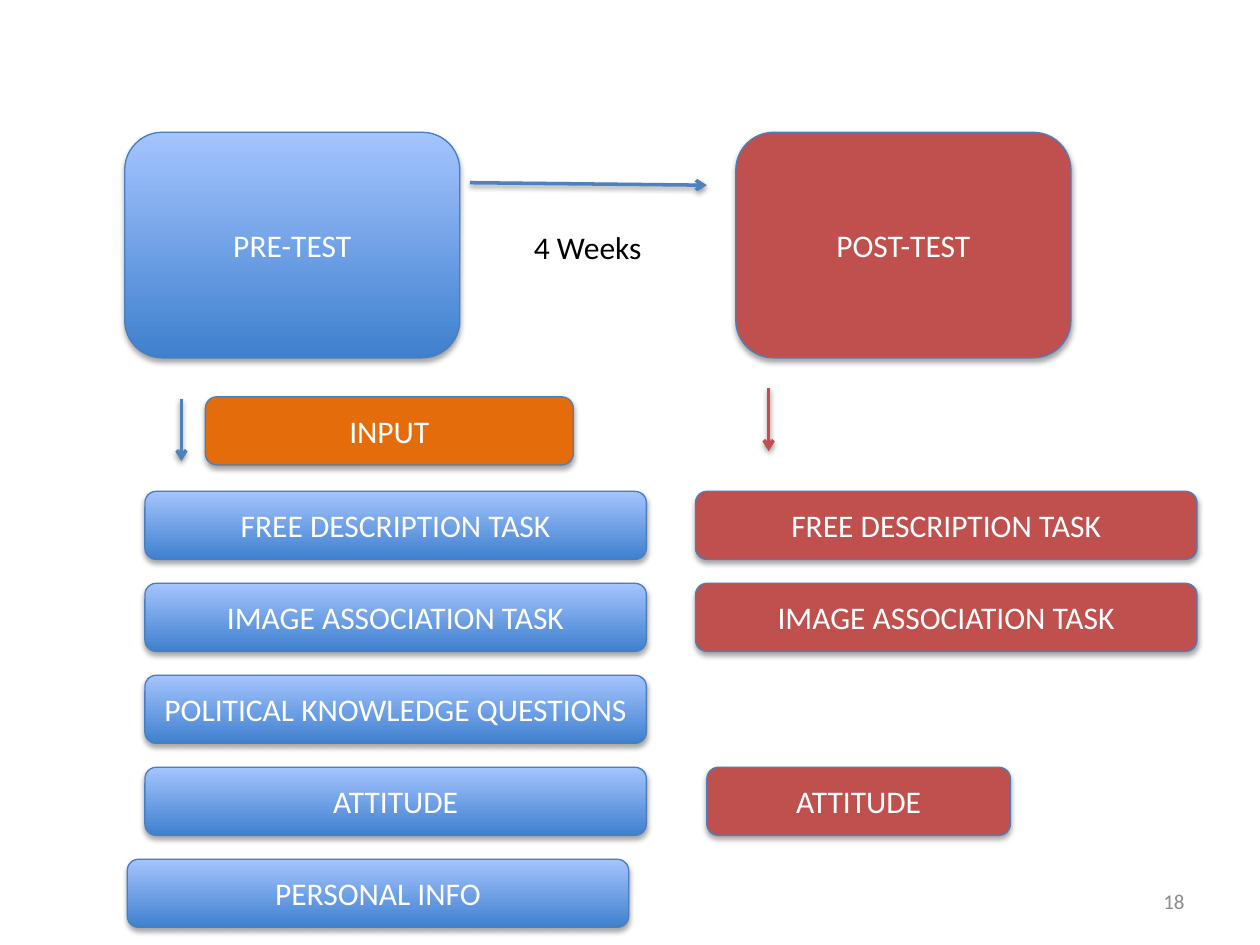
from dataclasses import dataclass
from typing import Optional

from lxml import etree
from pptx import Presentation
from pptx import util as u
from pptx.dml.color import RGBColor
from pptx.enum import shapes, text
from pptx.oxml import ns

WHITE = RGBColor(0xFF, 0xFF, 0xFF)
BLACK = RGBColor(0, 0, 0)
GREY = RGBColor(0x8C, 0x8C, 0x8C)
DEEP = RGBColor(0x3F, 0x80, 0xCE)
PALE = RGBColor(0xA4, 0xC4, 0xFF)
EDGE = RGBColor(0x4B, 0x7E, 0xBC)
BLUE = RGBColor(0x4F, 0x81, 0xBD)
RED = RGBColor(0xC0, 0x50, 0x4D)
ORANGE = RGBColor(0xE4, 0x6C, 0x0A)

FONT = "Calibri"
TOP, PITCH = 3.9, 0.73
WIDE, TALL = 3.98, 0.54


@dataclass
class Box:
    label: str
    left: float
    top: float
    width: float = WIDE
    height: float = TALL
    fill: Optional[RGBColor] = None


@dataclass
class Arrow:
    start: tuple[float, float]
    end: tuple[float, float]
    color: RGBColor


@dataclass
class Note:
    label: str
    left: float
    top: float
    width: float
    size: int
    color: RGBColor
    align: text.PP_ALIGN
    anchor: text.MSO_ANCHOR


def row(index: int) -> float:
    return TOP + PITCH * index


BOXES = [
    Box("PRE-TEST", 0.99, 1.05, 2.66, 1.79),
    Box("POST-TEST", 5.84, 1.05, 2.66, 1.79, RED),
    Box("FREE DESCRIPTION TASK", 1.15, row(0)),
    Box("IMAGE ASSOCIATION TASK", 1.15, row(1)),
    Box("POLITICAL KNOWLEDGE QUESTIONS", 1.15, row(2)),
    Box("ATTITUDE", 1.15, row(3)),
    Box("PERSONAL INFO", 1.01, row(4)),
    Box("INPUT", 1.63, 3.15, 2.92, fill=ORANGE),
    Box("FREE DESCRIPTION TASK", 5.52, row(0), fill=RED),
    Box("IMAGE ASSOCIATION TASK", 5.52, row(1), fill=RED),
    Box("ATTITUDE", 5.61, row(3), 2.41, fill=RED),
]

ARROWS = [
    Arrow((3.73, 1.45), (5.61, 1.47), BLUE),
    Arrow((1.44, 3.17), (1.44, 3.66), BLUE),
    Arrow((6.1, 3.08), (6.1, 3.58), RED),
]

NOTES = [
    Note("4 Weeks", 3.73, 1.76, 1.87, 18, BLACK,
         text.PP_ALIGN.CENTER, text.MSO_ANCHOR.TOP),
    Note("18", 7.17, 6.95, 2.33, 12, GREY,
         text.PP_ALIGN.RIGHT, text.MSO_ANCHOR.MIDDLE),
]


def add_shade(props, dist: float, alpha: int) -> None:
    effect = props.find(ns.qn("a:effectLst"))
    if effect is None:
        effect = etree.SubElement(props, ns.qn("a:effectLst"))
    shade = etree.SubElement(
        effect, ns.qn("a:outerShdw"), blurRad=str(u.Pt(3.1)),
        dist=str(u.Pt(dist)), dir="5400000", rotWithShape="0")
    color = etree.SubElement(shade, ns.qn("a:srgbClr"), val=str(BLACK))
    etree.SubElement(color, ns.qn("a:alpha"), val=str(alpha * 1000))


def write(frame, label: str, size: int, color: RGBColor, align, anchor) -> None:
    frame.word_wrap = True
    frame.vertical_anchor = anchor
    frame.text = label
    line = frame.paragraphs[0]
    line.alignment = align
    font = line.runs[0].font
    font.name, font.size = FONT, u.Pt(size)
    font.color.rgb = color


def draw_box(slide, box: Box) -> None:
    shape = slide.shapes.add_shape(
        shapes.MSO_SHAPE.ROUNDED_RECTANGLE, u.Inches(box.left),
        u.Inches(box.top), u.Inches(box.width), u.Inches(box.height))
    if box.fill is None:
        shape.fill.gradient()
        shape.fill.gradient_angle = 90
        for stop, color in zip(shape.fill.gradient_stops, (DEEP, PALE)):
            stop.color.rgb = color
    else:
        shape.fill.solid()
        shape.fill.fore_color.rgb = box.fill
    shape.line.color.rgb = EDGE
    shape.line.width = u.Pt(0.75)
    shape.shadow.inherit = False
    add_shade(shape.element.spPr, 1.8, 35)
    write(shape.text_frame, box.label, 18, WHITE,
          text.PP_ALIGN.CENTER, text.MSO_ANCHOR.MIDDLE)


def draw_arrow(slide, arrow: Arrow) -> None:
    points = [u.Inches(v) for v in (*arrow.start, *arrow.end)]
    link = slide.shapes.add_connector(shapes.MSO_CONNECTOR.STRAIGHT, *points)
    link.line.color.rgb = arrow.color
    link.line.width = u.Pt(2)
    props = link.element.spPr
    etree.SubElement(props.find(ns.qn("a:ln")), ns.qn("a:tailEnd"), type="arrow")
    add_shade(props, 1.6, 38)


def draw_note(slide, note: Note) -> None:
    shape = slide.shapes.add_textbox(
        u.Inches(note.left), u.Inches(note.top),
        u.Inches(note.width), u.Inches(0.4))
    write(shape.text_frame, note.label, note.size, note.color,
          note.align, note.anchor)


def main() -> None:
    deck = Presentation()
    deck.slide_width, deck.slide_height = u.Inches(10), u.Inches(7.5)
    slide = deck.slides.add_slide(deck.slide_layouts[6])
    for box in BOXES:
        draw_box(slide, box)
    for arrow in ARROWS:
        draw_arrow(slide, arrow)
    for note in NOTES:
        draw_note(slide, note)
    deck.save("out.pptx")


if __name__ == "__main__":
    main()
